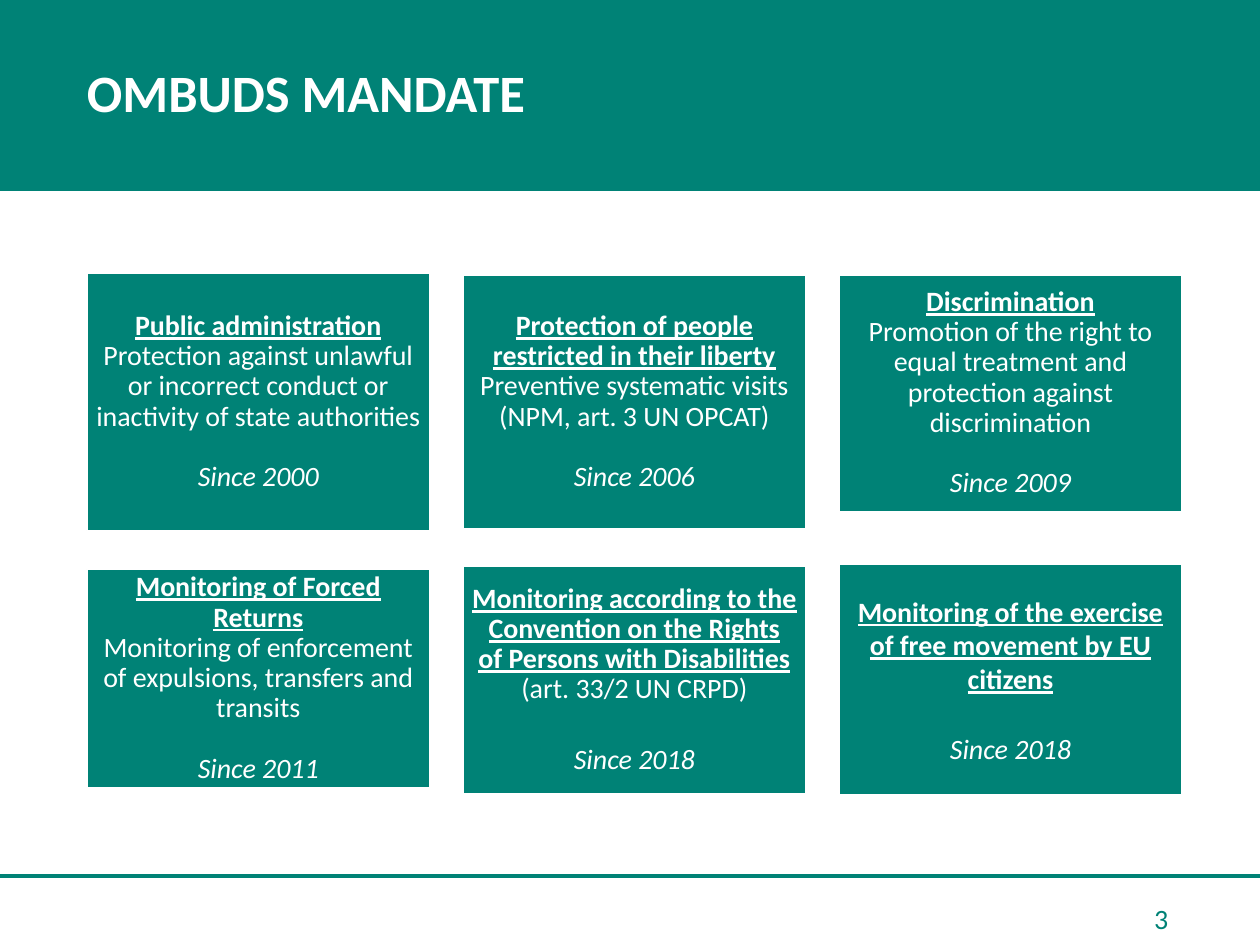
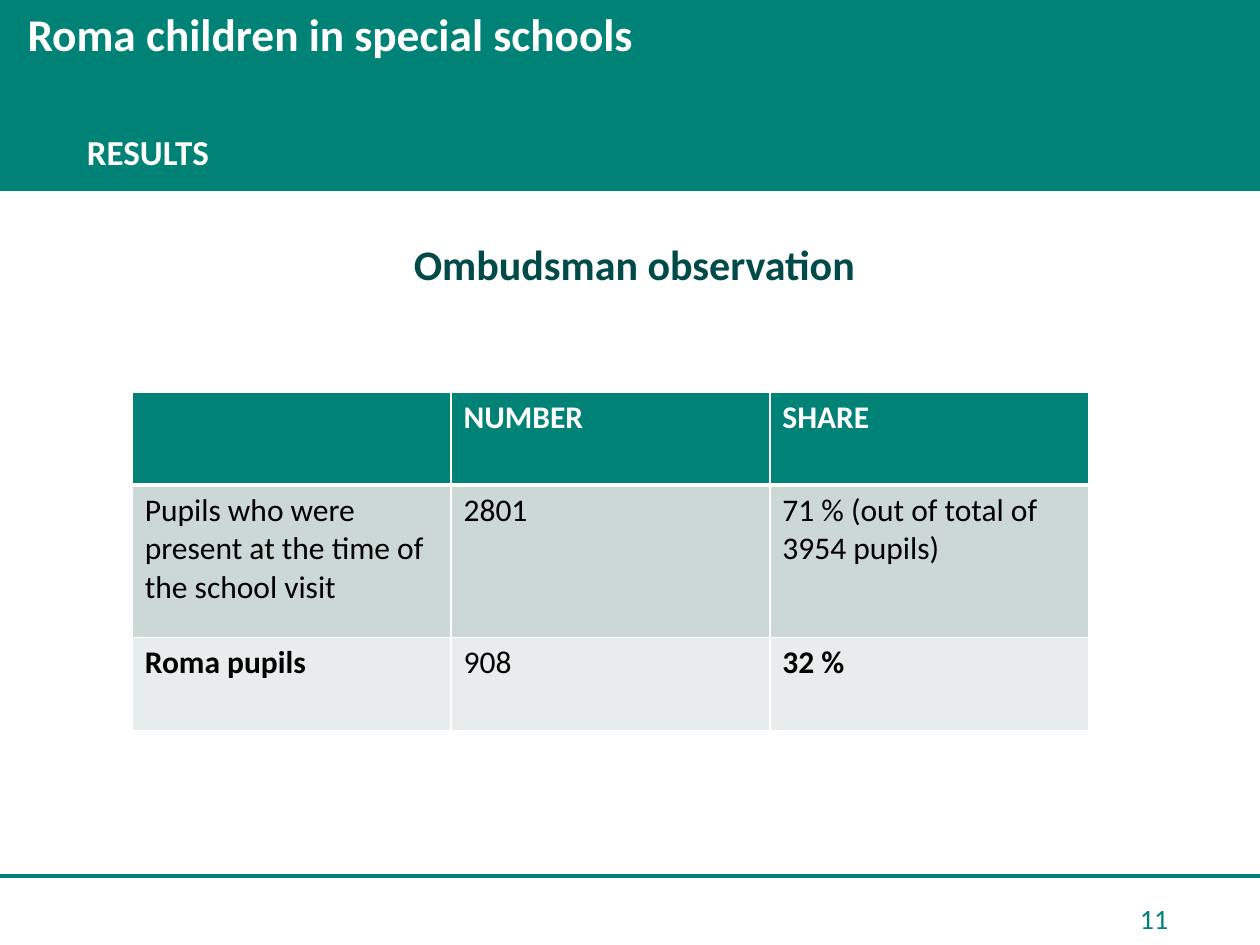
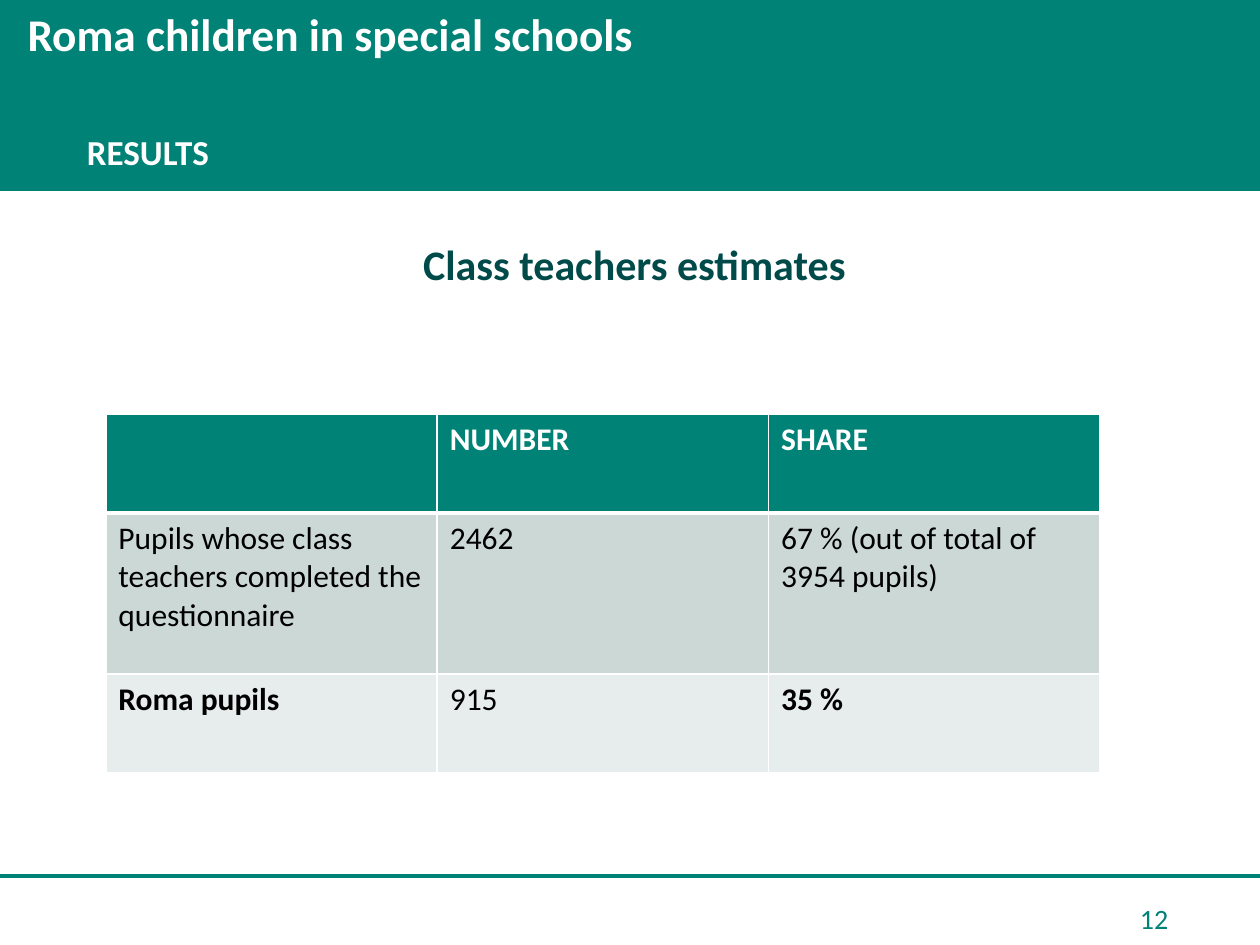
from dataclasses import dataclass, replace
from typing import NamedTuple

from lxml.etree import SubElement
from pptx import Presentation
from pptx.dml.color import RGBColor
from pptx.enum.shapes import MSO_CONNECTOR, MSO_SHAPE
from pptx.enum.text import MSO_ANCHOR, PP_ALIGN
from pptx.oxml.ns import qn
from pptx.util import Inches, Pt

# Shared look
COLORS = {
    "teal": "008276",
    "dark": "004A4A",
    "white": "FFFFFF",
    "black": "000000",
    "band_one": "CCD8D6",
    "band_two": "E7EDEC",
}
FONT = "Calibri"

# Grid: 100 columns by 75 rows over the whole slide
SLIDE_WIDTH, SLIDE_HEIGHT = Inches(10), Inches(7.5)
COLUMN, ROW = SLIDE_WIDTH / 100, SLIDE_HEIGHT / 75
MARGIN = 6.9
BAND_ROWS = 15.1
CARD_COLUMNS, CARD_PITCH = 27.2, 29.85


class Area(NamedTuple):
    left: float
    top: float
    width: float
    height: float

    def lengths(self) -> tuple[int, int, int, int]:
        return (round(self.left * COLUMN), round(self.top * ROW),
                round(self.width * COLUMN), round(self.height * ROW))


BAND = Area(0, 0, 100, BAND_ROWS)
NUMBER_AREA = Area(70.8, 70.9, 22.9, 4)
TOPIC_AREA = Area(1.2, 1.2, 59.9, 4.4)
HEADING_AREA = Area(MARGIN, 18.4, 86.9, 48.6)


@dataclass(frozen=True)
class Style:
    size: float
    color: str = "white"
    bold: bool = False
    italic: bool = False
    underline: bool = False
    align: PP_ALIGN = PP_ALIGN.LEFT
    spacing: float = 1.0
    before: float = 0


TITLE = Style(30, bold=True, spacing=0.9)
SUBTITLE = replace(TITLE, size=20)
TOPIC = Style(25.9, bold=True, spacing=0.7)
HEADING = Style(24, "dark", bold=True, align=PP_ALIGN.CENTER)
NUMBER = Style(16, "teal", align=PP_ALIGN.RIGHT)
CARD_TEXT = Style(16, align=PP_ALIGN.CENTER, spacing=0.9)
CARD_TITLE = replace(CARD_TEXT, bold=True, underline=True)
CARD_SINCE = replace(CARD_TEXT, italic=True)
TABLE_HEAD = Style(18, bold=True)
TABLE_TEXT = Style(18, "black")
TABLE_BOLD = replace(TABLE_TEXT, bold=True)


@dataclass(frozen=True)
class Card:
    title: str
    text: str
    since: str
    column: int
    top: float
    height: float
    gap: float = 17.3
    title_spacing: float = 0.9


@dataclass(frozen=True)
class Results:
    number: int
    heading: str
    area: Area
    row_shares: tuple[float, ...]
    group: str
    group_values: tuple[str, str]
    roma_values: tuple[str, str]


CARDS = (
    Card("Public administration",
         "Protection against unlawful or incorrect conduct or inactivity of state authorities",
         "Since 2000", 0, 21.7, 20.4),
    Card("Protection of people restricted in their liberty",
         "Preventive systematic visits\n(NPM, art. 3 UN OPCAT)",
         "Since 2006", 1, 21.8, 20.2),
    Card("Discrimination",
         "Promotion of the right to equal treatment and protection against discrimination",
         "Since 2009", 2, 21.8, 18.8),
    Card("Monitoring of Forced Returns",
         "Monitoring of enforcement of expulsions, transfers and transits",
         "Since 2011", 0, 45.2, 17.3),
    Card("Monitoring according to the Convention on the Rights\nof Persons with Disabilities",
         "(art. 33/2 UN CRPD)", "Since 2018", 1, 44.9, 18.1, gap=23),
    Card("Monitoring of the exercise of free movement by EU citizens",
         "", "Since 2018", 2, 44.8, 18.3, gap=23, title_spacing=1.0),
)

RESULTS = (
    Results(11, "Ombudsman observation", Area(10.5, 31.1, 75.9, 26.9), (7.4, 12.1, 7.4),
            "Pupils who were present at the time of the school visit",
            ("2801", "71 % (out of total of 3954 pupils)"), ("908", "32 %")),
    Results(12, "Class teachers estimates", Area(8.4, 32.9, 78.9, 28.4), (7.8, 12.8, 7.8),
            "Pupils whose class teachers completed the questionnaire",
            ("2462", "67 % (out of total of 3954 pupils)"), ("915", "35 %")),
)


# Text
def rgb(name: str) -> RGBColor:
    return RGBColor.from_string(COLORS[name])


def write_para(para, text: str, style: Style) -> None:
    para.alignment = style.align
    para.line_spacing = style.spacing
    if style.before:
        para.space_before = Pt(style.before)
    for index, line in enumerate(text.split("\n")):
        if index:
            para.add_line_break()
        span = para.add_run()
        span.text = line
        font = span.font
        font.name, font.size = FONT, Pt(style.size)
        font.bold, font.italic, font.underline = style.bold, style.italic, style.underline
        font.color.rgb = rgb(style.color)


def add_text(page, area: Area, text: str, style: Style, anchor=MSO_ANCHOR.TOP):
    frame = page.shapes.add_textbox(*area.lengths()).text_frame
    frame.word_wrap = True
    frame.vertical_anchor = anchor
    write_para(frame.paragraphs[0], text, style)
    return frame


def add_block(page, area: Area, line_color: str):
    block = page.shapes.add_shape(MSO_SHAPE.RECTANGLE, *area.lengths())
    block.shadow.inherit = False
    block.fill.solid()
    block.fill.fore_color.rgb = rgb("teal")
    block.line.color.rgb = rgb(line_color)
    block.line.width = Pt(1)
    return block


# Parts every slide has: footer line, title band, title, page number
def add_page(deck, title: str, style: Style, anchor: MSO_ANCHOR, number: int):
    page = deck.slides.add_slide(deck.slide_layouts[6])
    level = round(69.5 * ROW)
    rule = page.shapes.add_connector(MSO_CONNECTOR.STRAIGHT, 0, level, SLIDE_WIDTH, level)
    rule.line.color.rgb = rgb("teal")
    rule.line.width = Pt(2.25)
    SubElement(rule._element.spPr, qn("a:effectLst"))
    add_block(page, BAND, "teal")
    frame = add_text(page, BAND, title, style, anchor)
    frame.margin_left = round(MARGIN * COLUMN)
    if anchor == MSO_ANCHOR.BOTTOM:
        frame.margin_bottom = round(1.4 * ROW)
    add_text(page, NUMBER_AREA, str(number), NUMBER, MSO_ANCHOR.MIDDLE)
    return page


# Mandate cards
def add_card(page, card: Card) -> None:
    area = Area(MARGIN + card.column * CARD_PITCH, card.top, CARD_COLUMNS, card.height)
    frame = add_block(page, area, "white").text_frame
    frame.word_wrap = True
    frame.vertical_anchor = MSO_ANCHOR.MIDDLE
    frame.margin_left = frame.margin_right = round(0.7 * COLUMN)
    frame.margin_top = frame.margin_bottom = round(0.7 * ROW)
    write_para(frame.paragraphs[0], card.title, replace(CARD_TITLE, spacing=card.title_spacing))
    if card.text:
        write_para(frame.add_paragraph(), card.text, CARD_TEXT)
    write_para(frame.add_paragraph(), card.since, replace(CARD_SINCE, before=card.gap))


# Results table
def set_borders(cell, bottom: float, top: float) -> None:
    properties = cell._tc.get_or_add_tcPr()
    for side, width in (("L", 1), ("R", 1), ("T", top), ("B", bottom)):
        edge = SubElement(properties, qn(f"a:ln{side}"), w=str(Pt(width)))
        fill = SubElement(edge, qn("a:solidFill"))
        SubElement(fill, qn("a:srgbClr"), val=COLORS["white"])


def add_results_table(page, results: Results) -> None:
    rows = (
        ("teal", ("", "NUMBER", "SHARE"), (TABLE_HEAD,) * 3),
        ("band_one", (results.group, *results.group_values), (TABLE_TEXT,) * 3),
        ("band_two", ("Roma pupils", *results.roma_values),
         (TABLE_BOLD, TABLE_TEXT, TABLE_BOLD)),
    )
    table = page.shapes.add_table(len(rows), 3, *results.area.lengths()).table
    for column in table.columns:
        column.width = round(results.area.width / 3 * COLUMN)
    for index, (fill, texts, styles) in enumerate(rows):
        table.rows[index].height = round(results.row_shares[index] * ROW)
        for cell, text, style in zip(table.rows[index].cells, texts, styles):
            set_borders(cell, bottom=3 if index == 0 else 1, top=3 if index == 1 else 1)
            cell.fill.solid()
            cell.fill.fore_color.rgb = rgb(fill)
            if text:
                write_para(cell.text_frame.paragraphs[0], text, style)


# Slides
def add_mandate_page(deck) -> None:
    page = add_page(deck, "OMBUDS MANDATE", TITLE, MSO_ANCHOR.MIDDLE, 3)
    for card in CARDS:
        add_card(page, card)


def add_results_page(deck, results: Results) -> None:
    page = add_page(deck, "RESULTS", SUBTITLE, MSO_ANCHOR.BOTTOM, results.number)
    add_text(page, TOPIC_AREA, "Roma children in special schools", TOPIC)
    add_text(page, HEADING_AREA, results.heading, HEADING)
    add_results_table(page, results)


def main() -> None:
    deck = Presentation()
    deck.slide_width, deck.slide_height = SLIDE_WIDTH, SLIDE_HEIGHT
    add_mandate_page(deck)
    for results in RESULTS:
        add_results_page(deck, results)
    deck.save("out.pptx")


if __name__ == "__main__":
    main()
